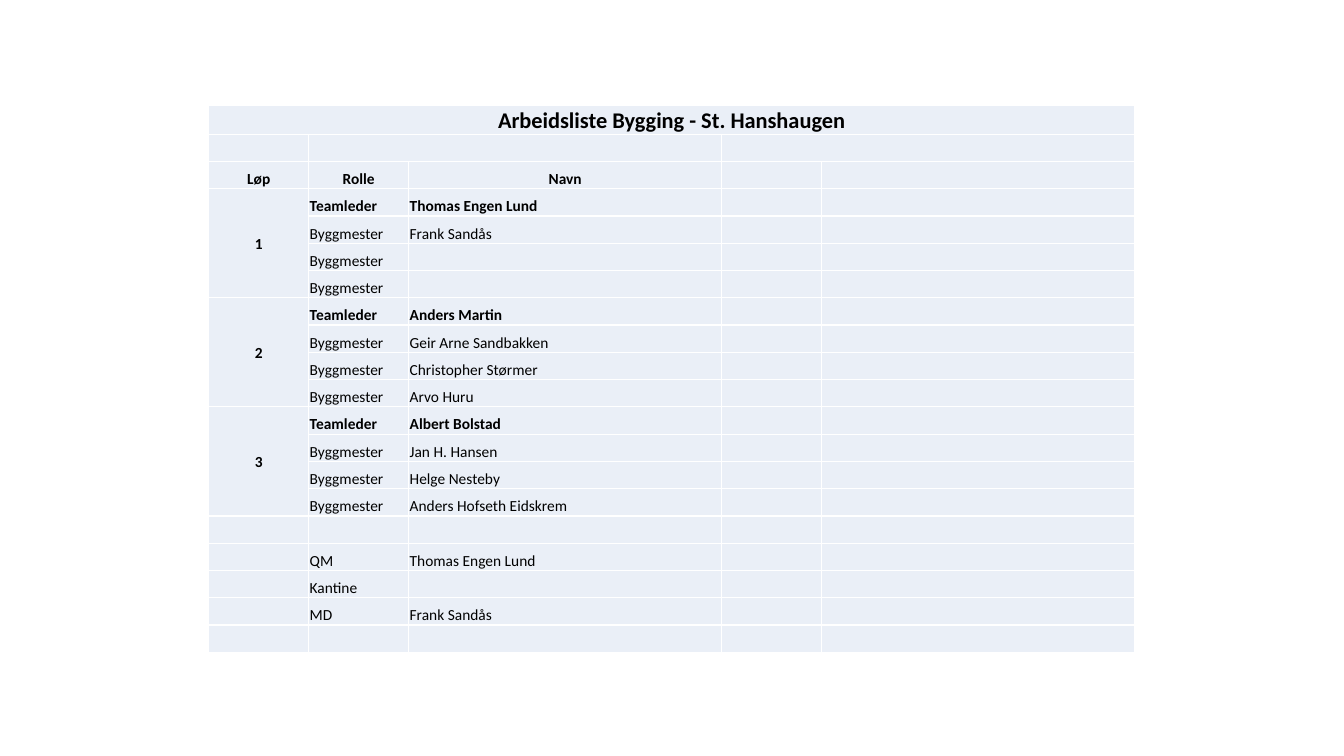
from lxml.etree import SubElement
from pptx import Presentation
from pptx.dml.color import RGBColor
from pptx.enum.text import MSO_ANCHOR as Anchor, PP_ALIGN as Align
from pptx.oxml.ns import qn
from pptx.util import Pt

FONT = "Calibri"
BODY_SIZE = 11
CELL_FILL = "EAEFF7"
BORDER = "FFFFFF"
COLUMN_WIDTHS = [71.4, 71.4, 223.6, 71.4, 223.6]
ROW_HEIGHT = 19.48
ROW_COUNT = 20

TITLE = "Arbeidsliste Bygging - St. Hanshaugen"
HEADINGS = ["Løp", "Rolle", "Navn"]
# The first name in each heat is the team leader.
HEATS = [
    ["Thomas Engen Lund", "Frank Sandås", "", ""],
    ["Anders Martin", "Geir Arne Sandbakken", "Christopher Størmer", "Arvo Huru"],
    ["Albert Bolstad", "Jan H. Hansen", "Helge Nesteby", "Anders Hofseth Eidskrem"],
]
SUPPORT = [("QM", "Thomas Engen Lund"), ("Kantine", ""), ("MD", "Frank Sandås")]
FIRST_HEAT_ROW = 3
FIRST_SUPPORT_ROW = 16


def color(hex_code):
    return RGBColor.from_string(hex_code)


def add_borders(cell):
    properties = cell._tc.get_or_add_tcPr()
    for side in ("lnL", "lnR", "lnT", "lnB"):
        line = SubElement(properties, qn(f"a:{side}"), w=str(Pt(1)))
        fill = SubElement(line, qn("a:solidFill"))
        SubElement(fill, qn("a:srgbClr"), val=BORDER)


def style_cell(cell):
    """Give a cell its fill, borders, margins and the text size it has while empty."""
    add_borders(cell)
    cell.fill.solid()
    cell.fill.fore_color.rgb = color(CELL_FILL)
    cell.margin_left = cell.margin_right = cell.margin_top = Pt(0.7)
    cell.margin_bottom = 0
    SubElement(cell.text_frame.paragraphs[0]._p, qn("a:endParaRPr"),
               sz=str(BODY_SIZE * 100))


def write(cell, text, size=BODY_SIZE, bold=False, align=Align.LEFT, anchor=Anchor.BOTTOM):
    if not text:
        return
    cell.vertical_anchor = anchor
    paragraph = cell.text_frame.paragraphs[0]
    paragraph.alignment = align
    run = paragraph.add_run()
    run.text = text
    run.font.name = FONT
    run.font.size = Pt(size)
    run.font.bold = bold
    run.font.color.rgb = color("000000")


def add_grid(slide):
    frame = slide.shapes.add_table(ROW_COUNT, len(COLUMN_WIDTHS), Pt(149.2), Pt(75.6),
                                   Pt(sum(COLUMN_WIDTHS)), Pt(ROW_HEIGHT * ROW_COUNT))
    table = frame.table
    table.first_row = table.horz_banding = False
    for column, width in zip(table.columns, COLUMN_WIDTHS):
        column.width = Pt(width)
    for row in table.rows:
        row.height = Pt(ROW_HEIGHT)
    for cell in table.iter_cells():
        style_cell(cell)
    return table


def write_header(table):
    table.cell(0, 0).merge(table.cell(0, 4))
    write(table.cell(0, 0), TITLE, size=16, bold=True, align=Align.CENTER)
    for left in (1, 3):
        table.cell(1, left).merge(table.cell(1, left + 1))
    for column, heading in enumerate(HEADINGS):
        write(table.cell(2, column), heading, bold=True, align=Align.CENTER)


def write_person(table, row, role, name, bold=False):
    write(table.cell(row, 1), role, bold=bold)
    write(table.cell(row, 2), name, bold=bold)


def write_heat(table, number, names):
    top = FIRST_HEAT_ROW + (number - 1) * len(names)
    table.cell(top, 0).merge(table.cell(top + len(names) - 1, 0))
    write(table.cell(top, 0), str(number), bold=True, align=Align.CENTER,
          anchor=Anchor.MIDDLE)
    for offset, name in enumerate(names):
        leads = offset == 0
        role = "Teamleder" if leads else "Byggmester"
        write_person(table, top + offset, role, name, bold=leads)


def main():
    deck = Presentation()
    deck.slide_width, deck.slide_height = Pt(960), Pt(540)
    slide = deck.slides.add_slide(deck.slide_layouts[6])
    table = add_grid(slide)
    write_header(table)
    for number, names in enumerate(HEATS, start=1):
        write_heat(table, number, names)
    for row, (role, name) in enumerate(SUPPORT, start=FIRST_SUPPORT_ROW):
        write_person(table, row, role, name)
    deck.save("out.pptx")


if __name__ == "__main__":
    main()
